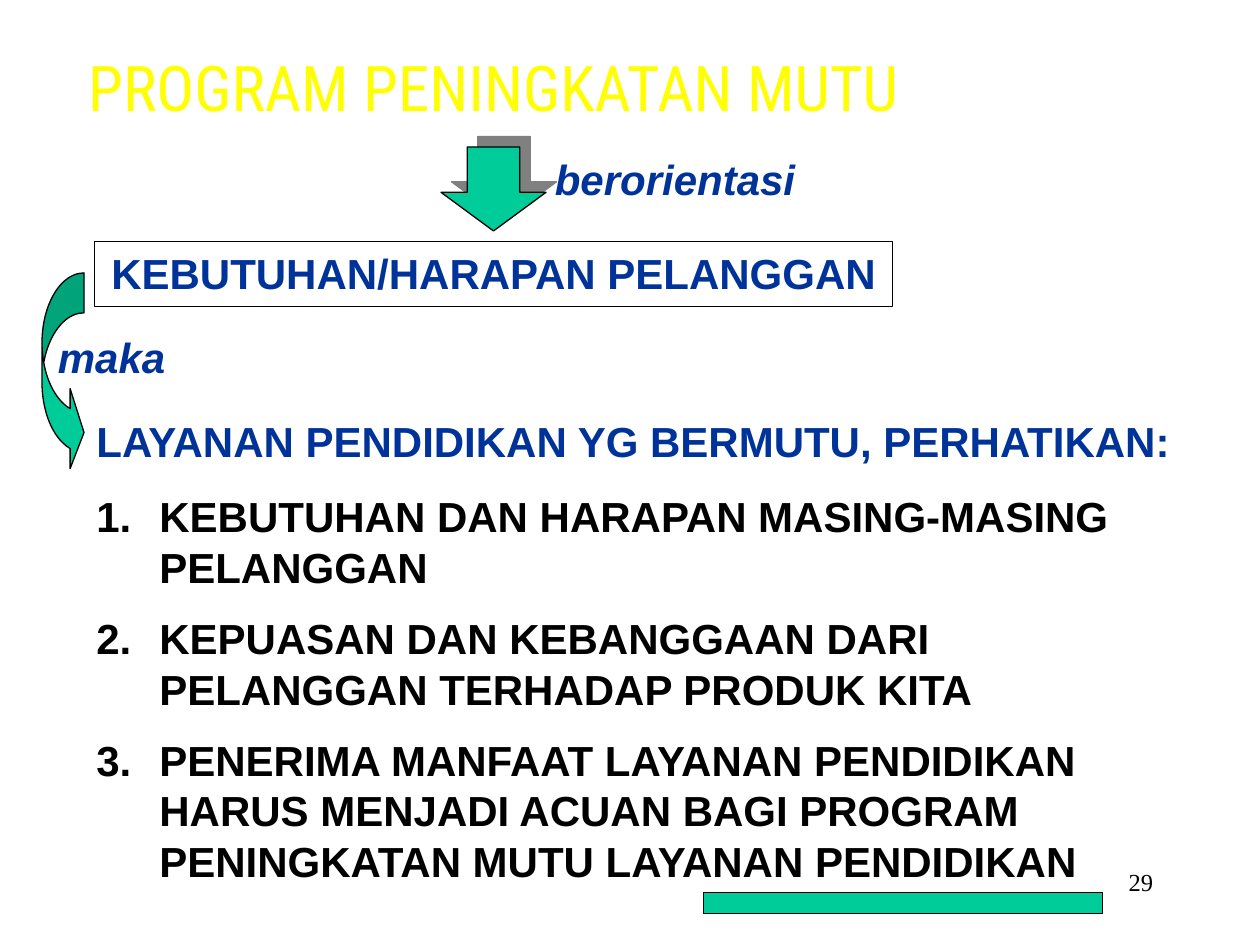
from pptx import Presentation
from pptx.dml.color import RGBColor
from pptx.enum.shapes import MSO_SHAPE
from pptx.enum.text import MSO_ANCHOR, PP_ALIGN
from pptx.oxml import parse_xml
from pptx.oxml.ns import nsdecls
from pptx.util import Pt

NAVY, GREEN, BLACK, YELLOW = "003399", "00CC99", "000000", "FFFF00"
HEAD = dict(name="Arial", size=Pt(24), bold=True)
WORD = dict(HEAD, italic=True)
NEEDS = [
    "KEBUTUHAN DAN HARAPAN MASING-MASING PELANGGAN",
    "KEPUASAN DAN KEBANGGAAN DARI PELANGGAN TERHADAP PRODUK KITA",
    "PENERIMA MANFAAT LAYANAN PENDIDIKAN HARUS MENJADI ACUAN BAGI "
    "PROGRAM PENINGKATAN MUTU LAYANAN PENDIDIKAN",
]


def color(code):
    return RGBColor.from_string(code)


def place(shape, box):
    for key, val in zip(("left", "top", "width", "height"), box):
        setattr(shape, key, Pt(val))


def write(frame, lines, form, ink, align=PP_ALIGN.LEFT, wrap=True):
    frame.word_wrap = wrap
    frame.vertical_anchor = MSO_ANCHOR.TOP
    for i, line in enumerate(lines):
        para = frame.add_paragraph() if i else frame.paragraphs[0]
        para.alignment = align
        run = para.add_run()
        run.text = line
        for key, val in form.items():
            setattr(run.font, key, val)
        run.font.color.rgb = color(ink)


def label(slide, box, text, form, ink, **more):
    shape = slide.shapes.add_textbox(*map(Pt, box))
    write(shape.text_frame, [text], form, ink, **more)


def block(slide, kind, box, fill=None, adjust=()):
    shape = slide.shapes.add_shape(kind, *map(Pt, box))
    shape.shadow.inherit = False
    if fill:
        shape.fill.solid()
        shape.fill.fore_color.rgb = color(fill)
    else:
        shape.fill.background()
    shape.line.color.rgb = color(BLACK)
    shape.line.width = Pt(0.75)
    for i, val in enumerate(adjust):
        shape.adjustments[i] = val
    return shape


def cast(shape, ink, dist, angle):
    """Give the shape a hard offset shadow."""
    effects = shape._element.spPr.find(
        "{http://schemas.openxmlformats.org/drawingml/2006/main}effectLst")
    effects.append(parse_xml(
        f'<a:outerShdw {nsdecls("a")} blurRad="0" dist="{Pt(dist)}" '
        f'dir="{angle * 60000}" algn="ctr" rotWithShape="0">'
        f'<a:srgbClr val="{ink}"/></a:outerShdw>'))


def title(slide, box):
    shape = slide.shapes.title
    place(shape, box)
    form = dict(name="Roboto Condensed", size=Pt(36))
    write(shape.text_frame, ["PROGRAM PENINGKATAN MUTU"], form, YELLOW,
          align=PP_ALIGN.CENTER, wrap=False)


def focus(slide, box):
    """Down arrow with its word, above the framed customer needs."""
    x, y, w, h = box
    arrow = block(slide, MSO_SHAPE.DOWN_ARROW, (x + 198, y, 60, 48),
                  GREEN, (0.5, 0.46))
    cast(arrow, "808080", 8.5, 315)
    label(slide, (x + 256, y, 152, 36), "berorientasi", WORD, NAVY, wrap=False)
    frame = block(slide, MSO_SHAPE.RECTANGLE, (x, y + h - 37, w, 37))
    write(frame.text_frame, ["KEBUTUHAN/HARAPAN PELANGGAN"], HEAD, NAVY,
          align=PP_ALIGN.CENTER)


def result(slide, box):
    """Curved arrow that leads to the service heading."""
    x, y, w, h = box
    block(slide, MSO_SHAPE.CURVED_RIGHT_ARROW, (x, y, 24, h),
          GREEN, (0.95, 1.9, 0.33))
    label(slide, (x + 2, y + 30, 76, 36), "maka", WORD, NAVY, wrap=False)
    label(slide, (x + 24, y + h - 36, w - 24, 36),
          "LAYANAN PENDIDIKAN YG BERMUTU, PERHATIKAN:", HEAD, NAVY, wrap=False)


def needs(slide, box):
    frame = slide.shapes.add_textbox(*map(Pt, box)).text_frame
    write(frame, NEEDS, HEAD, BLACK)
    for i, para in enumerate(frame.paragraphs):
        para.space_before = Pt(12 if i else 0)
        props = para._p.get_or_add_pPr()
        props.set("marL", str(Pt(36)))
        props.set("indent", str(Pt(-36)))
        props.append(parse_xml(
            f'<a:buFont {nsdecls("a")} typeface="+mj-lt"/>'))
        props.append(parse_xml(
            f'<a:buAutoNum {nsdecls("a")} type="arabicPeriod"/>'))


def footer(slide, box):
    """Green bar and page number."""
    x, y, w, h = box
    block(slide, MSO_SHAPE.RECTANGLE, (x, y + h - 12, 228, 12), GREEN)
    label(slide, (x + w - 150, y, 150, 36), "29",
          dict(name="Times New Roman", size=Pt(14)), BLACK,
          align=PP_ALIGN.RIGHT)


def main():
    deck = Presentation()
    deck.slide_width, deck.slide_height = Pt(720), Pt(540)
    slide = deck.slides.add_slide(deck.slide_layouts[5])
    title(slide, (42, 24, 480, 42))
    focus(slide, (54, 84, 456, 91))
    result(slide, (24, 156, 659, 114))
    needs(slide, (48, 277, 636, 233))
    footer(slide, (402, 492, 264, 30))
    deck.save("out.pptx")


if __name__ == "__main__":
    main()
